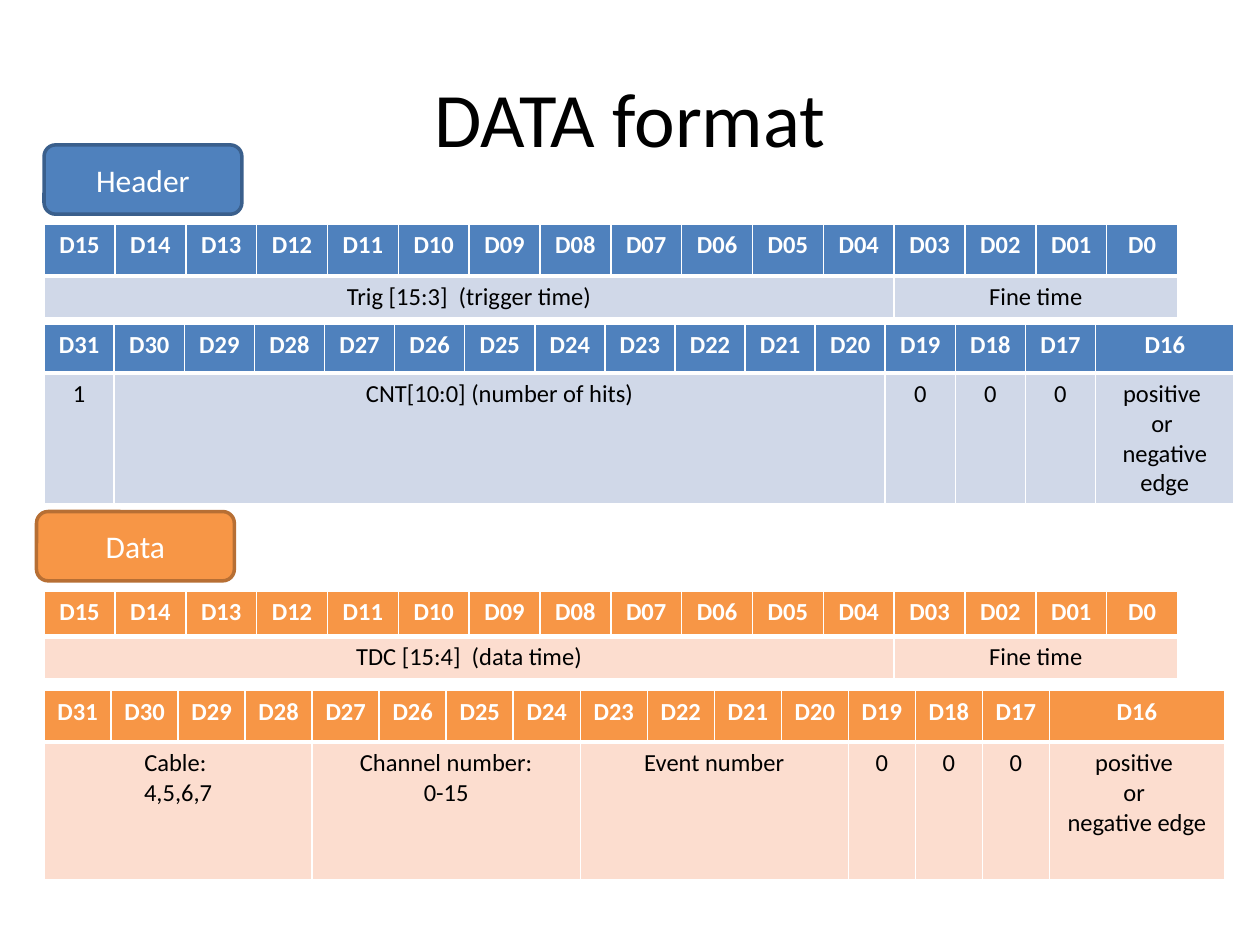
from lxml import etree
from pptx import Presentation
from pptx.dml.color import RGBColor
from pptx.enum.shapes import MSO_SHAPE
from pptx.enum.text import MSO_ANCHOR, PP_ALIGN
from pptx.oxml.ns import qn
from pptx.util import Inches, Pt

ROUND = MSO_SHAPE.ROUNDED_RECTANGLE
MIDDLE = MSO_ANCHOR.MIDDLE
CENTER = PP_ALIGN.CENTER
FONT = "Calibri"
LEFT = 0.35
BITS = 16

BLUE = ("4F81BD", "D0D8E8")
ORANGE = ("F79646", "FCDDCF")
EDGE = "positive \vor \vnegative edge"
FLAGS = [("0", 1), ("0", 1), ("0", 1), (EDGE, 1)]

TITLE = "DATA format"
BADGES = [
    ("Header", 0.35, 1.15, "4F81BD", "3A5F8C"),
    ("Data", 0.29, 4.06, "F79646", "B76F34"),
]
WORDS = [
    dict(top=1.78, width=9, last=9 / BITS, rows=(0.41, 0.33), tones=BLUE, high=15,
         fields=[("Trig [15:3]  (trigger time)", 12), ("Fine time", 4)]),
    dict(top=2.57, width=9.45, last=1.1, rows=(0.39, 1.04), tones=BLUE, high=31,
         fields=[("1", 1), ("CNT[10:0] (number of hits)", 11)] + FLAGS),
    dict(top=4.69, width=9, last=9 / BITS, rows=(0.36, 0.33), tones=ORANGE, high=15,
         fields=[("TDC [15:4]  (data time)", 12), ("Fine time", 4)]),
    dict(top=5.48, width=9.37, last=1.39, rows=(0.41, 1.09), tones=ORANGE, high=31,
         fields=[("Cable: \v4,5,6,7", 4), ("Channel number:\v0-15", 4),
                 ("Event number", 4)] + FLAGS),
]


def color(code):
    return RGBColor.from_string(code)


def write(frame, text, size, tone, bold=False):
    para = frame.paragraphs[0]
    para.text = text
    para.alignment = CENTER
    for run in para.runs:
        run.font.name = FONT
        run.font.size = Pt(size)
        run.font.bold = bold
        run.font.color.rgb = color(tone)


def border(cell, top, bottom):
    props = cell._tc.get_or_add_tcPr()
    for side, width in (("L", 1), ("R", 1), ("T", top), ("B", bottom)):
        line = etree.SubElement(props, qn("a:ln" + side), w=str(Pt(width)))
        fill = etree.SubElement(line, qn("a:solidFill"))
        etree.SubElement(fill, qn("a:srgbClr"), val="FFFFFF")


def add_word(slide, top, width, last, rows, tones, high, fields):
    table = slide.shapes.add_table(
        2, BITS, Inches(LEFT), Inches(top), Inches(width), Inches(sum(rows))).table
    for col in table.columns:
        col.width = Inches((width - last) / (BITS - 1))
    table.columns[BITS - 1].width = Inches(last)
    for row, height in enumerate(rows):
        table.rows[row].height = Inches(height)
        for col in range(BITS):
            cell = table.cell(row, col)
            border(cell, *((1, 3) if row == 0 else (3, 1)))
            cell.fill.solid()
            cell.fill.fore_color.rgb = color(tones[row])
    for col in range(BITS):
        bit = high - col
        name = f"D{bit:02d}" if bit else "D0"
        write(table.cell(0, col).text_frame, name, 14, "FFFFFF", True)
    col = 0
    for text, span in fields:
        cell = table.cell(1, col)
        if span > 1:
            cell.merge(table.cell(1, col + span - 1))
        write(cell.text_frame, text, 14, "000000")
        col += span


def add_badge(slide, text, left, top, fill, line):
    badge = slide.shapes.add_shape(
        ROUND, Inches(left), Inches(top), Inches(1.57), Inches(0.55))
    badge.shadow.inherit = False
    badge.fill.solid()
    badge.fill.fore_color.rgb = color(fill)
    badge.line.color.rgb = color(line)
    badge.line.width = Pt(2)
    badge.text_frame.vertical_anchor = MIDDLE
    write(badge.text_frame, text, 18, "FFFFFF")


def main():
    deck = Presentation()
    deck.slide_width, deck.slide_height = Inches(10), Inches(7.5)
    slide = deck.slides.add_slide(deck.slide_layouts[6])
    title = slide.shapes.add_textbox(
        Inches(0.5), Inches(0.3), Inches(9), Inches(1.25)).text_frame
    title.word_wrap = True
    title.vertical_anchor = MIDDLE
    write(title, TITLE, 44, "000000")
    for word in WORDS:
        add_word(slide, **word)
    for badge in BADGES:
        add_badge(slide, *badge)
    deck.save("out.pptx")


if __name__ == "__main__":
    main()
